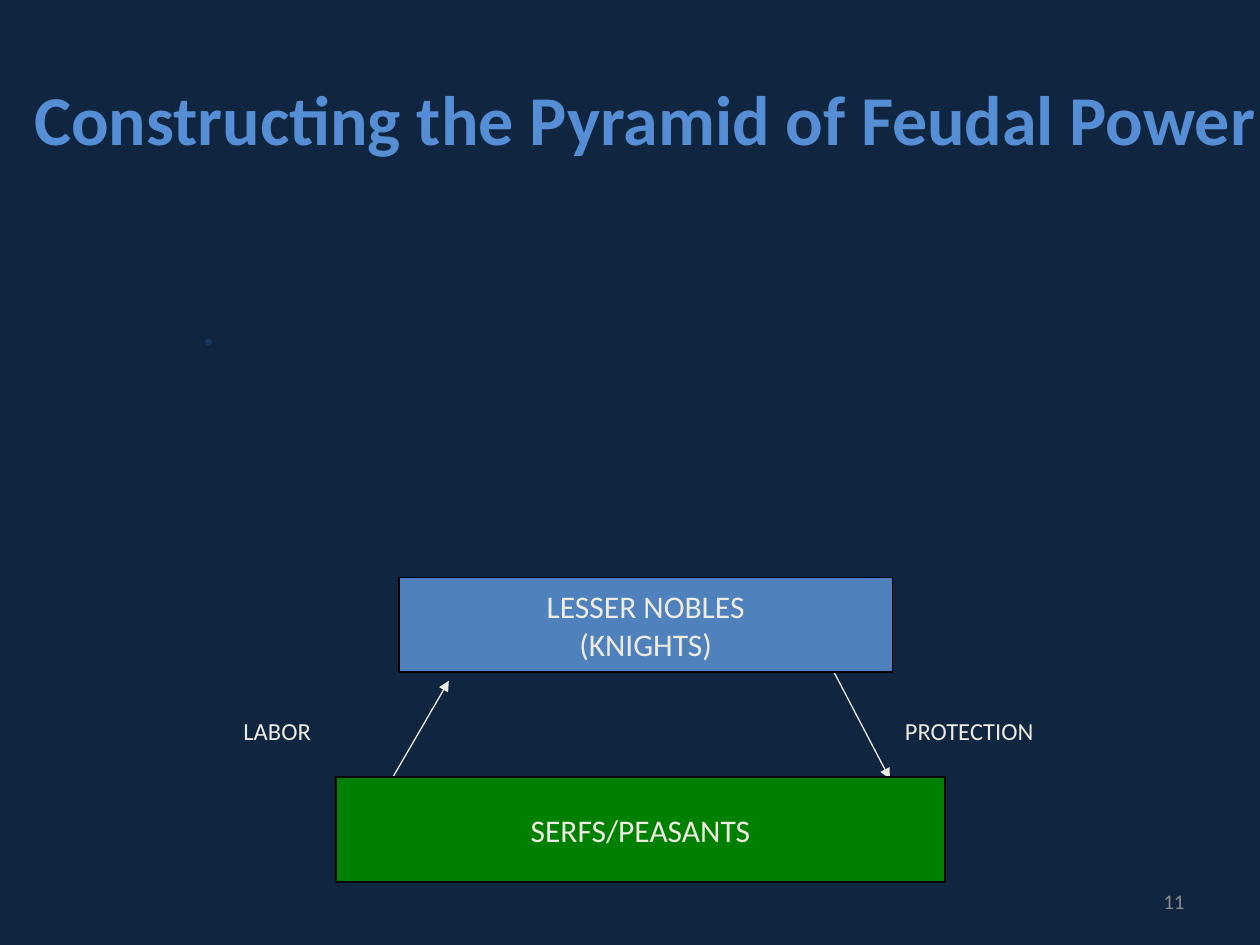
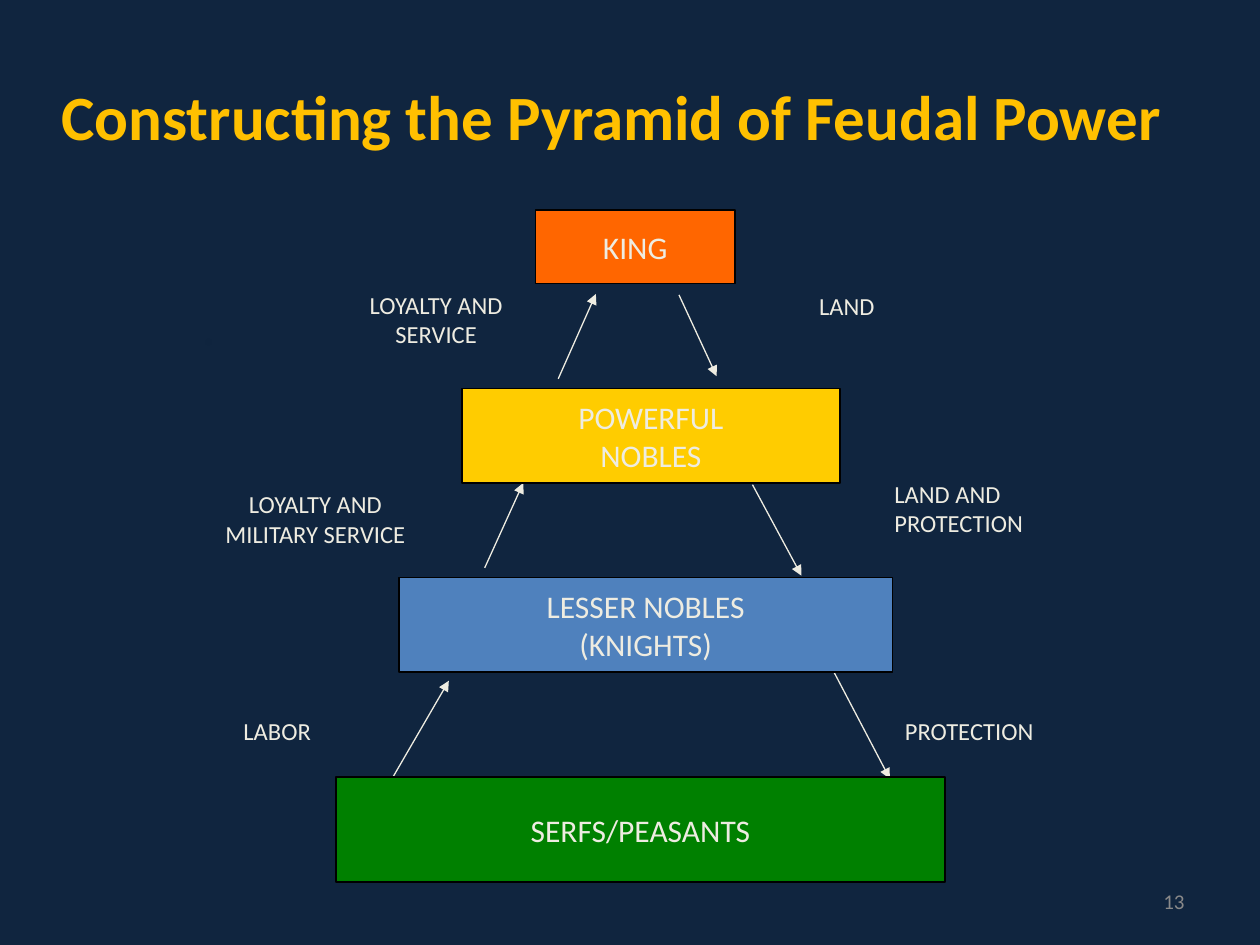
from dataclasses import dataclass

from lxml import etree
from pptx import Presentation
from pptx.dml.color import RGBColor
from pptx.enum.shapes import MSO_CONNECTOR, MSO_SHAPE
from pptx.enum.text import MSO_ANCHOR, MSO_AUTO_SIZE, PP_ALIGN
from pptx.oxml.ns import qn
from pptx.util import Pt

RECTANGLE = MSO_SHAPE.RECTANGLE
STRAIGHT = MSO_CONNECTOR.STRAIGHT
TOP, MIDDLE = MSO_ANCHOR.TOP, MSO_ANCHOR.MIDDLE
LEFT, CENTER, RIGHT = PP_ALIGN.LEFT, PP_ALIGN.CENTER, PP_ALIGN.RIGHT
NO_FIT = MSO_AUTO_SIZE.NONE


@dataclass(frozen=True)
class Theme:
    """Colours, font and type sizes shared by the slides."""
    font: str = "Calibri"
    background: str = "10253F"
    ink: str = "EEECE1"
    outline: str = "000000"
    number: str = "898989"
    title_blue: str = "558ED5"
    title_gold: str = "FFC000"
    body_blue: str = "17375E"
    body_dark: str = "0F243E"
    king: str = "FF6600"
    nobles: str = "FFCC00"
    knights: str = "4F81BD"
    serfs: str = "008000"
    large_title_size: int = 40
    title_size: int = 36
    body_size: int = 32
    tier_size: int = 18
    label_size: int = 14
    number_size: int = 12
    line_width: float = 0.75


THEME = Theme()
TITLE = "Constructing the Pyramid of Feudal Power"

KING = ("KING", (306, 120, 114, 42), THEME.king)
NOBLES = ("POWERFUL\nNOBLES", (264, 222, 216, 54), THEME.nobles)
KNIGHTS = ("LESSER NOBLES\n(KNIGHTS)", (228, 330, 282, 54), THEME.knights)
SERFS = ("SERFS/PEASANTS", (192, 444, 348, 60), THEME.serfs)

SERF_EXCHANGE = (
    ("LABOR", (132, 405.5, 62, 24), LEFT, (224, 445, 256.5, 389)),
    ("PROTECTION", (510, 405.5, 101.5, 24), LEFT, (476, 383, 508.5, 445)),
)
KNIGHT_EXCHANGE = (
    ("LOYALTY AND\nMILITARY SERVICE", (108, 276, 144.5, 41), CENTER,
     (277, 324.5, 299, 276)),
    ("LAND AND\nPROTECTION", (504, 270, 101.5, 41), LEFT, (430, 277, 458, 329)),
)
NOBLE_EXCHANGE = (
    ("LOYALTY AND\nSERVICE", (192, 162, 114.5, 41), CENTER,
     (319, 216.5, 340.5, 168)),
    ("LAND", (461, 163, 53, 24), LEFT, (388, 168.5, 409.5, 215)),
)


def points(values):
    """Convert a sequence of numbers to point lengths."""
    return [Pt(value) for value in values]


def color(code):
    """Return the colour for a hexadecimal code."""
    return RGBColor.from_string(code)


def write(shape, text, size, ink, align, anchor=TOP, bold=False):
    """Fill a shape with uniformly formatted paragraphs."""
    frame = shape.text_frame
    frame.text = text
    frame.word_wrap = True
    frame.auto_size = NO_FIT
    frame.vertical_anchor = anchor
    for para in frame.paragraphs:
        para.alignment = align
        para.font.name = THEME.font
        para.font.size = Pt(size)
        para.font.bold = bold
        para.font.color.rgb = color(ink)


def place(shape, bounds):
    """Move and size a placeholder."""
    shape.left, shape.top, shape.width, shape.height = points(bounds)


def add_label(page, text, bounds, size, ink, align, anchor=TOP):
    """Add a text box."""
    box = page.shapes.add_textbox(*points(bounds))
    write(box, text, size, ink, align, anchor)


def add_tier(page, text, bounds, fill):
    """Add one level of the pyramid."""
    box = page.shapes.add_shape(RECTANGLE, *points(bounds))
    box.shadow.inherit = False
    box.fill.solid()
    box.fill.fore_color.rgb = color(fill)
    box.line.color.rgb = color(THEME.outline)
    box.line.width = Pt(THEME.line_width)
    write(box, text, THEME.tier_size, THEME.ink, CENTER, MIDDLE)


def add_arrow(page, ends):
    """Add a line with a triangular head at its end."""
    arrow = page.shapes.add_connector(STRAIGHT, *points(ends))
    arrow.line.color.rgb = color(THEME.ink)
    arrow.line.width = Pt(THEME.line_width)
    head = etree.SubElement(arrow.line._get_or_add_ln(), qn("a:tailEnd"))
    head.set("type", "triangle")
    etree.SubElement(arrow._element.spPr, qn("a:effectLst"))


def add_body(page, ink):
    """Fill the body placeholder with an unbulleted paragraph."""
    body = page.placeholders[1]
    place(body, (108, 162, 480, 324))
    write(body, ".", THEME.body_size, ink, LEFT)
    properties = body.text_frame.paragraphs[0]._p.get_or_add_pPr()
    properties.set("marL", str(Pt(27)))
    properties.set("indent", str(Pt(-27)))
    properties.insert(0, etree.Element(qn("a:buNone")))


def add_page(deck, number, title_bounds, title_size, title_ink, body_ink):
    """Add a slide with its title, body and number."""
    page = deck.slides.add_slide(deck.slide_layouts[1])
    place(page.shapes.title, title_bounds)
    write(page.shapes.title, TITLE, title_size, title_ink, CENTER, MIDDLE, True)
    page.shapes.title.text_frame.word_wrap = False
    add_body(page, body_ink)
    add_label(page, number, (516, 500.5, 168, 28.75), THEME.number_size,
              THEME.number, RIGHT, MIDDLE)
    return page


def add_pyramid(page, tiers, exchanges):
    """Draw the exchanges and then the tiers they join."""
    for exchange in exchanges:
        for text, bounds, align, ends in exchange:
            add_arrow(page, ends)
            add_label(page, text, bounds, THEME.label_size, THEME.ink, align)
    for tier in tiers:
        add_tier(page, *tier)


def main():
    """Build and save the deck."""
    deck = Presentation()
    deck.slide_width, deck.slide_height = points((720, 540))
    background = deck.slide_master.background.fill
    background.solid()
    background.fore_color.rgb = color(THEME.background)

    page = add_page(deck, "11", (12, 37, 713, 60), THEME.large_title_size,
                    THEME.title_blue, THEME.body_blue)
    add_pyramid(page, (KNIGHTS, SERFS), (SERF_EXCHANGE,))

    page = add_page(deck, "13", (0, 36, 699, 60), THEME.title_size,
                    THEME.title_gold, THEME.body_dark)
    add_pyramid(page, (KNIGHTS, NOBLES, KING, SERFS),
                (SERF_EXCHANGE, KNIGHT_EXCHANGE, NOBLE_EXCHANGE))
    deck.save("out.pptx")


if __name__ == "__main__":
    main()
